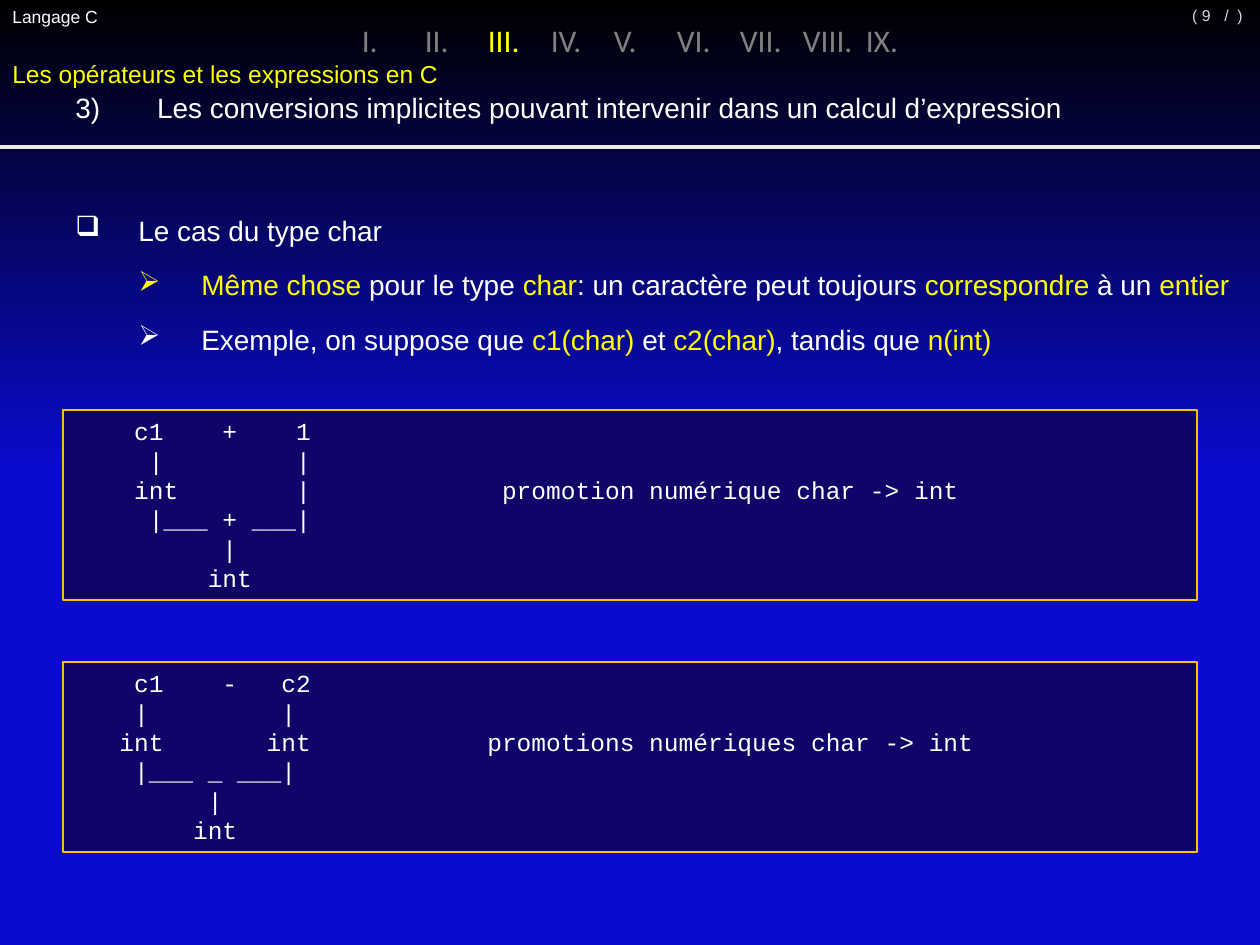
from lxml.etree import SubElement
from pptx import Presentation
from pptx.dml.color import RGBColor
from pptx.enum.shapes import MSO_CONNECTOR, MSO_SHAPE
from pptx.enum.text import MSO_ANCHOR, PP_ALIGN
from pptx.oxml.ns import qn
from pptx.util import Pt

PX = 914400 / 126
WHITE, YELLOW, GREY, PALE = "FFFFFF", "FFFF00", "808080", "D9D9D9"

# Content: text between asterisks is highlighted in yellow
COURSE = "Langage C"
PAGE = [("/  )", (1194, -10, 79, 50), PP_ALIGN.CENTER),
        ("( 9", (1155, -10, 68, 50), PP_ALIGN.RIGHT)]
CHAPTERS = ["I.", "II.", "*III.*", "IV.", "V.", "VI.", "VII.", "VIII.", "IX."]
TITLE = "*Les opérateurs et les expressions en C*"
SECTION = ("3)\t Les conversions implicites pouvant intervenir "
           "dans un calcul d’expression")
POINTS = [
    (2, "❑", "Le cas du type char"),
    (3, "➢", "*Même chose *pour le type *char*: un caractère peut toujours "
             "*correspondre *à un *entier*"),
    (3, "➢", "Exemple, on suppose que *c1(char) *et *c2(char)*, "
             "tandis que *n(int)*"),
]
CODE = [
    """\
    c1    +    1
     |         |
    int        |             promotion numérique char -> int
     |___ + ___|
          |
         int""",
    """\
    c1    -   c2
    |         |
   int       int            promotions numériques char -> int
    |___ _ ___|
         |
        int""",
]


def px(n):
    return round(n * PX)


def color(code):
    return RGBColor.from_string(code)


def style(run, size, code, font="Arial"):
    run.font.size = Pt(size)
    run.font.name = font
    run.font.color.rgb = color(code)


def write(par, text, size, code=WHITE, font="Arial"):
    for i, part in enumerate(text.split("*")):
        if part:
            run = par.add_run()
            run.text = part
            style(run, size, YELLOW if i % 2 else code, font)


def indent(par, left, hang, bullet=None):
    par.space_before = par.space_after = Pt(6)
    props = par._p.get_or_add_pPr()
    props.set("marL", str(px(left)))
    props.set("indent", str(-px(hang)))
    if bullet:
        SubElement(props, qn("a:buChar")).set("char", bullet)


def add_box(slide, box):
    frame = slide.shapes.add_textbox(*map(px, box)).text_frame
    frame.word_wrap = True
    return frame


def add_code(slide, top, text):
    shape = slide.shapes.add_shape(
        MSO_SHAPE.RECTANGLE, *map(px, (63, top, 1134, 190)))
    shape.shadow.inherit = False
    shape.fill.solid()
    shape.fill.fore_color.rgb = color("100468")
    shape.line.color.rgb = color("FFC000")
    shape.line.width = Pt(0.75)
    frame = shape.text_frame
    frame.word_wrap = True
    frame.vertical_anchor = MSO_ANCHOR.TOP
    frame.text = text
    for par in frame.paragraphs:
        par.alignment = PP_ALIGN.LEFT
        style(par.runs[0], 14, WHITE, "Courier New")


def main():
    deck = Presentation()
    deck.slide_width, deck.slide_height = px(1260), px(945)
    slide = deck.slides.add_slide(deck.slide_layouts[6])

    # Background: black fading to blue by mid-height
    fill = slide.background.fill
    fill.gradient()
    fill.gradient_angle = 270
    for stop, pos, code in zip(fill.gradient_stops, (0, 0.5),
                               ("000000", "0B0BCF")):
        stop.position = pos
        stop.color.rgb = color(code)

    # Header: course, page number, chapters
    write(add_box(slide, (0, 0, 116, 34)).paragraphs[0], COURSE, 10)
    for text, box, align in PAGE:
        frame = add_box(slide, box)
        frame.vertical_anchor = MSO_ANCHOR.MIDDLE
        frame.paragraphs[0].alignment = align
        write(frame.paragraphs[0], text, 9, PALE)
    par = add_box(slide, (0, 15, 1260, 50)).paragraphs[0]
    par.alignment = PP_ALIGN.CENTER
    write(par, "\t".join(CHAPTERS), 18, GREY, "Calibri")

    # Title and section
    for level, text, size, box, left in (
            (0, TITLE, 14, (0, 53, 1260, 43), 74),
            (1, SECTION, 16, (0, 84, 1081, 47), 137)):
        par = add_box(slide, box).paragraphs[0]
        par.level = level
        indent(par, left, 74)
        write(par, text, size)

    # Bullet points
    frame = add_box(slide, (0, 207, 1260, 158))
    for i, (level, mark, text) in enumerate(POINTS):
        par = frame.add_paragraph() if i else frame.paragraphs[0]
        par.level = level
        indent(par, 63 * level, 63, mark)
        write(par, text, 16)
    # level 2 starts at 126 px, level 3 at 189 px

    # Header rule
    rule = slide.shapes.add_connector(
        MSO_CONNECTOR.STRAIGHT, 0, px(147), px(1260), px(147))
    rule.line.color.rgb = color("EEECE1")
    rule.line.width = Pt(2)
    SubElement(rule._element.spPr, qn("a:effectLst"))

    # Code panels
    for i, text in enumerate(CODE):
        add_code(slide, 410 + 252 * i, text)

    deck.save("out.pptx")


if __name__ == "__main__":
    main()
